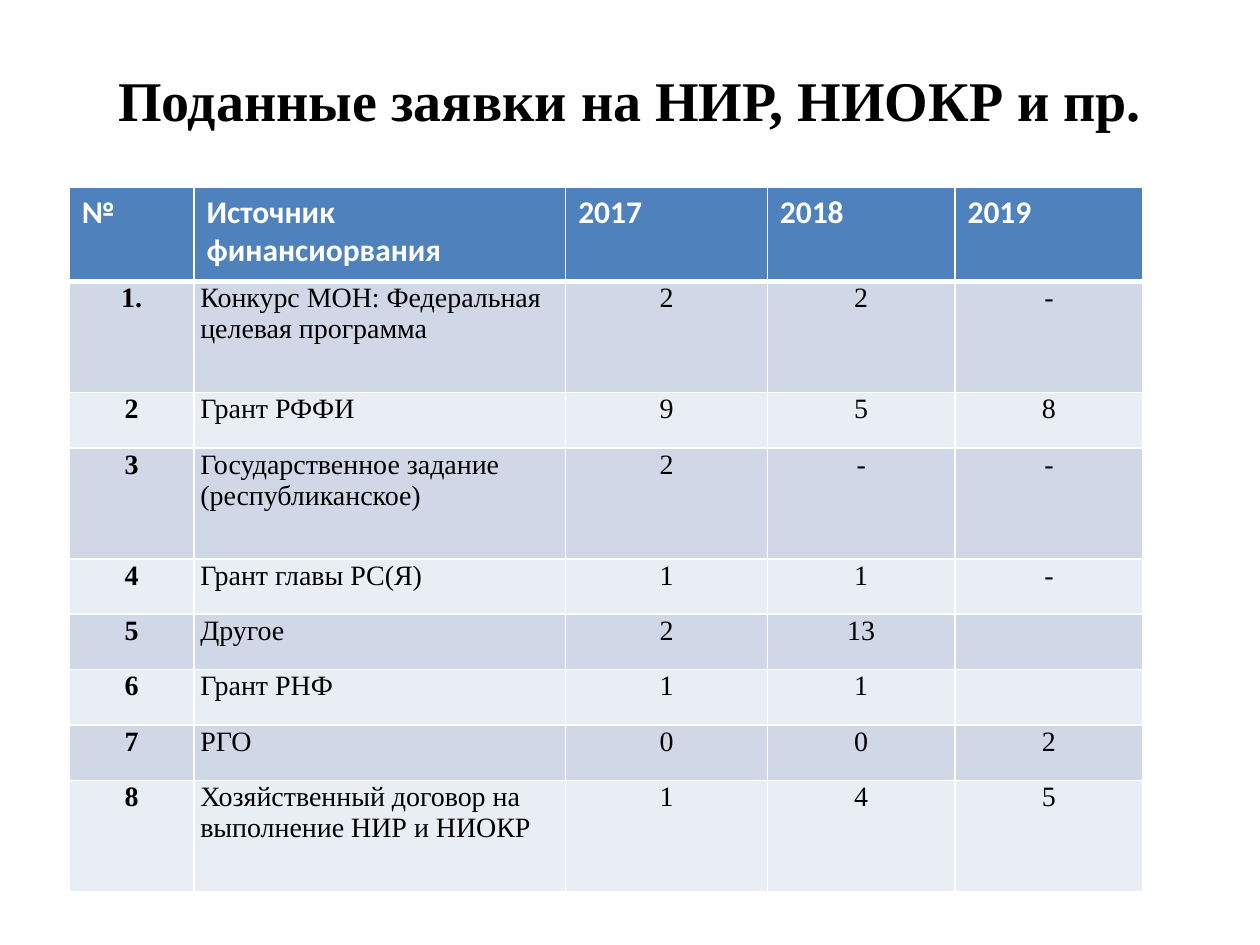
from dataclasses import dataclass

from lxml.etree import SubElement
from pptx import Presentation
from pptx.dml.color import RGBColor
from pptx.enum.text import MSO_ANCHOR, PP_ALIGN
from pptx.oxml.ns import qn
from pptx.util import Inches, Pt


@dataclass(frozen=True)
class Theme:
    heading_font: str = "Calibri"
    body_font: str = "Times New Roman"
    title_size: int = 32
    heading_size: int = 18
    body_size: int = 16
    ink: str = "000000"
    white: str = "FFFFFF"
    header_fill: str = "4F81BD"
    bands: tuple = ("D0D8E8", "E9EDF4")
    thin: int = 1
    thick: int = 3


TITLE = "Поданные заявки на НИР, НИОКР и пр."
HEADINGS = ["№", "Источник финансиорвания", "2017", "2018", "2019"]
APPLICATIONS = [
    ["1.", "Конкурс МОН: Федеральная целевая программа", "2", "2", "-"],
    ["2", "Грант РФФИ", "9", "5", "8"],
    ["3", "Государственное задание (республиканское)", "2", "-", "-"],
    ["4", "Грант главы РС(Я)", "1", "1", "-"],
    ["5", "Другое", "2", "13", ""],
    ["6", "Грант РНФ", "1", "1", ""],
    ["7", "РГО", "0", "0", "2"],
    ["8", "Хозяйственный договор на выполнение НИР и НИОКР", "1", "4", "5"],
]
COLUMN_WIDTHS = [0.99, 2.95, 1.6, 1.49, 1.49]
HEADER_HEIGHT, SINGLE, DOUBLE = 0.75, 0.44, 0.88
TWO_LINE_LENGTH = 30


class SlideBuilder:
    def __init__(self, deck, theme):
        self.deck = deck
        self.theme = theme
        self.page = deck.slides.add_slide(deck.slide_layouts[5])

    def place(self, left, top, width, height):
        """Turn shares of the slide into lengths."""
        across, down = self.deck.slide_width, self.deck.slide_height
        return (int(left * across), int(top * down),
                int(width * across), int(height * down))

    def style(self, para, font, size, color, bold, align):
        para.alignment = align
        for span in para.runs:
            span.font.name = font
            span.font.size = Pt(size)
            span.font.bold = bold
            span.font.color.rgb = RGBColor.from_string(color)

    def title(self, text, area):
        box = self.page.shapes.title
        box.left, box.top, box.width, box.height = self.place(*area)
        frame = box.text_frame
        frame.text = text
        frame.vertical_anchor = MSO_ANCHOR.MIDDLE
        self.style(frame.paragraphs[0], self.theme.body_font,
                   self.theme.title_size, self.theme.ink, True, PP_ALIGN.CENTER)

    def borders(self, cell, top, bottom):
        properties = cell._tc.get_or_add_tcPr()
        thin = self.theme.thin
        for side, width in zip("LRTB", (thin, thin, top, bottom)):
            line = SubElement(properties, qn(f"a:ln{side}"), w=str(Pt(width)))
            fill = SubElement(line, qn("a:solidFill"))
            SubElement(fill, qn("a:srgbClr"), val=self.theme.white)

    def cell(self, cell, text, row, column):
        theme = self.theme
        header = row == 0
        # Borders come before the fill in the cell properties
        self.borders(cell, theme.thick if row == 1 else theme.thin,
                     theme.thick if header else theme.thin)
        color = theme.header_fill if header else theme.bands[(row - 1) % 2]
        cell.fill.solid()
        cell.fill.fore_color.rgb = RGBColor.from_string(color)
        if text:
            cell.text_frame.text = text
        para = cell.text_frame.paragraphs[0]
        if header:
            self.style(para, theme.heading_font, theme.heading_size,
                       theme.white, True, PP_ALIGN.LEFT)
            return
        if text:
            cell.margin_left = cell.margin_right = Inches(0.05)
            cell.margin_top = cell.margin_bottom = Inches(0.01)
        self.style(para, theme.body_font, theme.body_size, theme.ink,
                   column == 0, PP_ALIGN.LEFT if column == 1 else PP_ALIGN.CENTER)

    def table(self, rows, widths, heights, left, top):
        area = self.place(left, top, 0, 0)[:2]
        table = self.page.shapes.add_table(
            len(rows), len(widths), *area,
            Inches(sum(widths)), Inches(sum(heights))).table
        for column, width in zip(table.columns, widths):
            column.width = Inches(width)
        for line, height in zip(table.rows, heights):
            line.height = Inches(height)
        for r, values in enumerate(rows):
            for c, text in enumerate(values):
                self.cell(table.cell(r, c), text, r, c)


def main():
    deck = Presentation()
    deck.slide_width, deck.slide_height = Inches(10), Inches(7.5)
    builder = SlideBuilder(deck, Theme())

    # Title
    builder.title(TITLE, (0.05, 0.04, 0.9, 0.13))

    # Applications by funding source; long names get a double row
    heights = [HEADER_HEIGHT] + [
        DOUBLE if len(source) > TWO_LINE_LENGTH else SINGLE
        for _, source, *_ in APPLICATIONS]
    builder.table([HEADINGS] + APPLICATIONS, COLUMN_WIDTHS, heights, 0.055, 0.198)

    deck.save("out.pptx")


if __name__ == "__main__":
    main()
